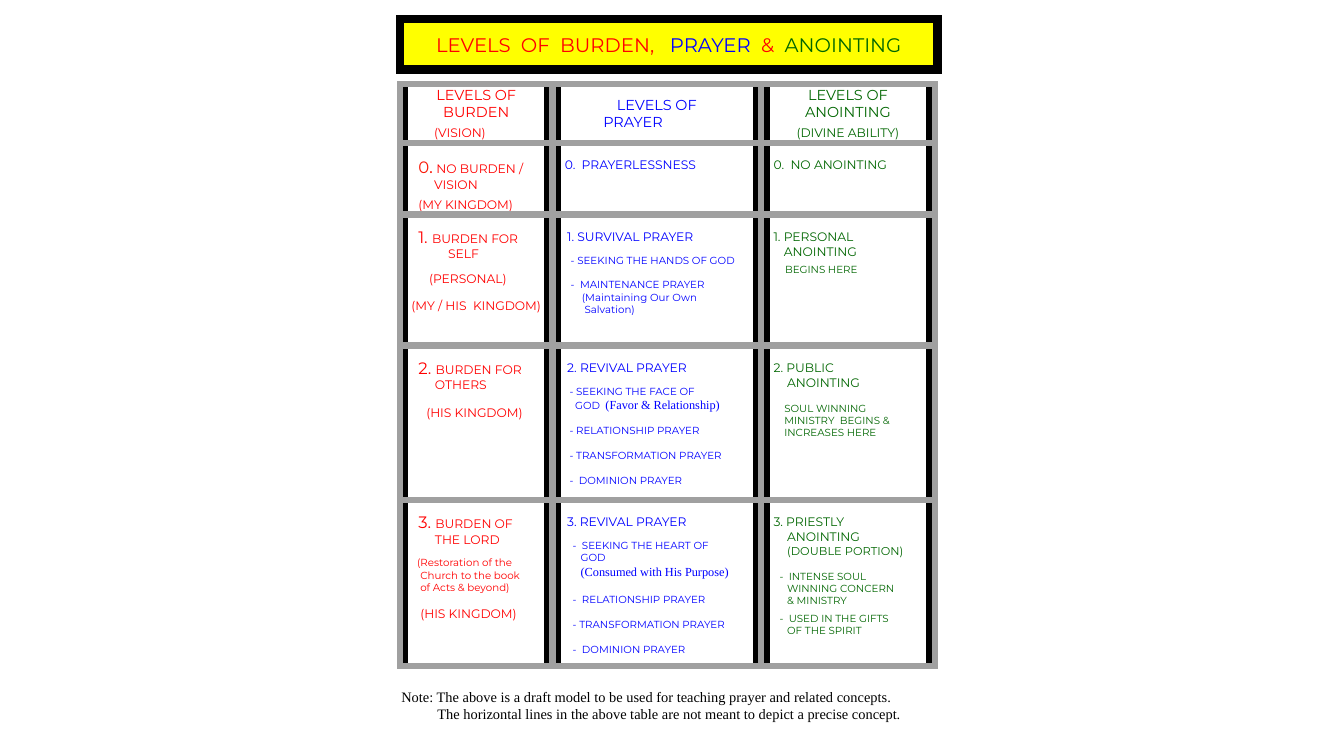
from collections import namedtuple

from lxml.etree import SubElement
from pptx import Presentation
from pptx.dml.color import RGBColor
from pptx.enum.shapes import MSO_SHAPE as Shape
from pptx.enum.text import MSO_ANCHOR as Anchor, PP_ALIGN as Align
from pptx.oxml.ns import qn
from pptx.util import Cm, Pt

COLORS = {
    "red": "FF0000", "zero": "F91807", "blue": "0000FF", "green": "006600",
    "black": "000000", "gray": "A0A0A0", "yellow": "FFFF00",
}
SANS = "Montserrat"
SERIF = "Times New Roman"
SMALL, BODY, HEAD, NUMBER = 7.3, 8.8, 10.3, 11.8
TINY_GAP, GAP, WIDE_GAP = 3.5, 7.2, 8.9

Span = namedtuple("Span", "text size font color", defaults=(BODY, SANS, None))
Line = namedtuple("Line", "spans indent gap")
Cell = namedtuple("Cell", "top lines")


def line(text, indent=None, size=BODY, gap=0, font=SANS):
    return Line([Span(text, size, font)], indent, gap)


def small(text, indent, gap=0):
    return line(text, indent, SMALL, gap)


def numbered(number, text):
    return Line([Span(number + " ", NUMBER), Span(text)], 0.23, 0)


COLUMNS = [("red", 3.84), ("blue", 5.26), ("green", 4.37)]
ROWS = [
    (1.5, [
        Cell(0, [line("LEVELS OF BURDEN", size=HEAD),
                 line("(VISION)", 0.63, gap=TINY_GAP)]),
        Cell(GAP, [line("LEVELS OF", size=HEAD), line("PRAYER", 1.05, HEAD)]),
        Cell(0, [line("LEVELS OF ANOINTING", size=HEAD),
                 line("(DIVINE ABILITY)", gap=TINY_GAP)]),
    ]),
    (1.8, [
        Cell(GAP, [
            Line([Span("0", NUMBER, SANS, "zero"), Span(".", 13.2, SANS, "zero"),
                  Span(" NO BURDEN /")], 0.23, 0),
            line("VISION", 0.63),
            line("(MY KINGDOM)", 0.23, gap=TINY_GAP)]),
        Cell(WIDE_GAP, [line("0.  PRAYERLESSNESS", 0.08)]),
        Cell(WIDE_GAP, [line("0.  NO ANOINTING", 0.08)]),
    ]),
    (3.3, [
        Cell(GAP, [
            numbered("1.", "BURDEN FOR"), line("SELF", 0.98),
            line("(PERSONAL)", 0.5, gap=GAP),
            line("(MY / HIS  KINGDOM)", gap=WIDE_GAP)]),
        Cell(WIDE_GAP, [
            line("1. SURVIVAL PRAYER", 0.14),
            small("- SEEKING THE HANDS OF GOD", 0.23, GAP),
            small("-  MAINTENANCE PRAYER", 0.23, WIDE_GAP),
            small("(Maintaining Our Own", 0.51), small("Salvation)", 0.58)]),
        Cell(WIDE_GAP, [
            line("1. PERSONAL", 0.08), line("ANOINTING", 0.34),
            small("BEGINS HERE", 0.37, TINY_GAP)]),
    ]),
    (3.89, [
        Cell(GAP, [
            numbered("2.", "BURDEN FOR"), line("OTHERS", 0.65),
            line("(HIS KINGDOM)", 0.43, gap=WIDE_GAP)]),
        Cell(WIDE_GAP, [
            line("2. REVIVAL PRAYER", 0.14),
            small("- SEEKING THE FACE OF", 0.2, GAP),
            Line([Span("GOD  ", SMALL),
                  Span("(Favor & Relationship)", BODY, SERIF)], 0.34, 0),
            small("- RELATIONSHIP PRAYER", 0.2, WIDE_GAP),
            small("- TRANSFORMATION PRAYER", 0.2, WIDE_GAP),
            small("-  DOMINION PRAYER", 0.2, WIDE_GAP)]),
        Cell(WIDE_GAP, [
            line("2. PUBLIC", 0.08), line("ANOINTING", 0.42),
            small("SOUL WINNING", 0.35, WIDE_GAP),
            small("MINISTRY  BEGINS &", 0.35), small("INCREASES HERE", 0.35)]),
    ]),
    (4.19, [
        Cell(GAP, [
            numbered("3.", "BURDEN OF"), line("THE LORD", 0.65),
            small("(Restoration of the", 0.2, GAP),
            small("Church to the book", 0.28), small("of Acts & beyond)", 0.28),
            line("(HIS KINGDOM)", 0.28, gap=WIDE_GAP)]),
        Cell(WIDE_GAP, [
            line("3. REVIVAL PRAYER", 0.14),
            small("-  SEEKING THE HEART OF", 0.28, GAP), small("GOD", 0.48),
            line("(Consumed with His Purpose)", 0.48, font=SERIF),
            small("-  RELATIONSHIP PRAYER", 0.28, 10.7),
            small("- TRANSFORMATION PRAYER", 0.28, WIDE_GAP),
            small("-  DOMINION PRAYER", 0.28, WIDE_GAP)]),
        Cell(WIDE_GAP, [
            line("3. PRIESTLY", 0.08), line("ANOINTING", 0.42),
            line("(DOUBLE PORTION)", 0.42, 8.1),
            small("-  INTENSE SOUL", 0.23, WIDE_GAP),
            small("WINNING CONCERN", 0.42), small("& MINISTRY", 0.42),
            small("-  USED IN THE GIFTS", 0.23, TINY_GAP),
            small("OF THE SPIRIT", 0.42)]),
    ]),
]
TITLE = [Line([
    Span("LEVELS  OF  BURDEN,   ", 14, SANS, "red"), Span("PRAYER", 14, SANS, "blue"),
    Span("  &  ", 14, SANS, "red"), Span("ANOINTING", 14, SANS, "green")], None, 0)]
NOTE = [
    line("Note: The above is a draft model to be used for teaching prayer "
         "and related concepts.", 0, HEAD, font=SERIF),
    line("The horizontal lines in the above table are not meant to depict "
         "a precise concept.", 0.91, HEAD, font=SERIF),
]


def rgb(name):
    return RGBColor.from_string(COLORS[name])


def add_frame(page, box, color, width=4.5, fill=None):
    frame = page.shapes.add_shape(Shape.RECTANGLE, *map(Cm, box))
    frame.shadow.inherit = False
    if fill:
        frame.fill.solid()
        frame.fill.fore_color.rgb = rgb(fill)
    else:
        frame.fill.background()
    frame.line.color.rgb = rgb(color)
    frame.line.width = Pt(width)
    SubElement(frame.line._get_or_add_ln(), qn("a:miter"), lim="800000")
    return frame


def write(shape, lines, color, side, top):
    frame = shape.text_frame
    frame.word_wrap = True
    frame.vertical_anchor = Anchor.TOP
    frame.margin_left = frame.margin_right = Cm(side)
    frame.margin_top = top
    frame.margin_bottom = Cm(0.05)
    for index, entry in enumerate(lines):
        para = frame.add_paragraph() if index else frame.paragraphs[0]
        para.alignment = Align.CENTER if entry.indent is None else Align.LEFT
        para.space_before = Pt(entry.gap)
        para._p.get_or_add_pPr().set("marL", str(Cm(entry.indent or 0)))
        for span in entry.spans:
            run = para.add_run()
            run.text = span.text
            run.font.size = Pt(span.size)
            run.font.name = span.font
            run.font.color.rgb = rgb(span.color or color)


def add_title(page, box):
    banner = add_frame(page, box, "black", 6, "yellow")
    write(banner, TITLE, "red", 0.18, Cm(0.36))


def add_levels(page, left, top):
    y = top
    for height, cells in ROWS:
        x = left
        for (color, width), cell in zip(COLUMNS, cells):
            inner = add_frame(page, (x + 0.13, y, width - 0.26, height), "black")
            write(inner, cell.lines, color, 0.1, Cm(0.05) + Pt(cell.top))
            add_frame(page, (x, y, width, height), "gray")
            x += width
        y += height
    add_frame(page, (left, top, x - left, y - top), "gray")


def add_note(page, box):
    note = page.shapes.add_textbox(*map(Cm, box))
    write(note, NOTE, "black", 0.18, Cm(0.36))


def main():
    deck = Presentation()
    deck.slide_width, deck.slide_height = Cm(33.86), Cm(19.05)
    page = deck.slides.add_slide(deck.slide_layouts[6])
    add_levels(page, 10.08, 2.11)
    add_title(page, (10.08, 0.48, 13.54, 1.27))
    add_note(page, (9.93, 16.97, 14.94, 1.75))
    deck.save("out.pptx")


if __name__ == "__main__":
    main()
